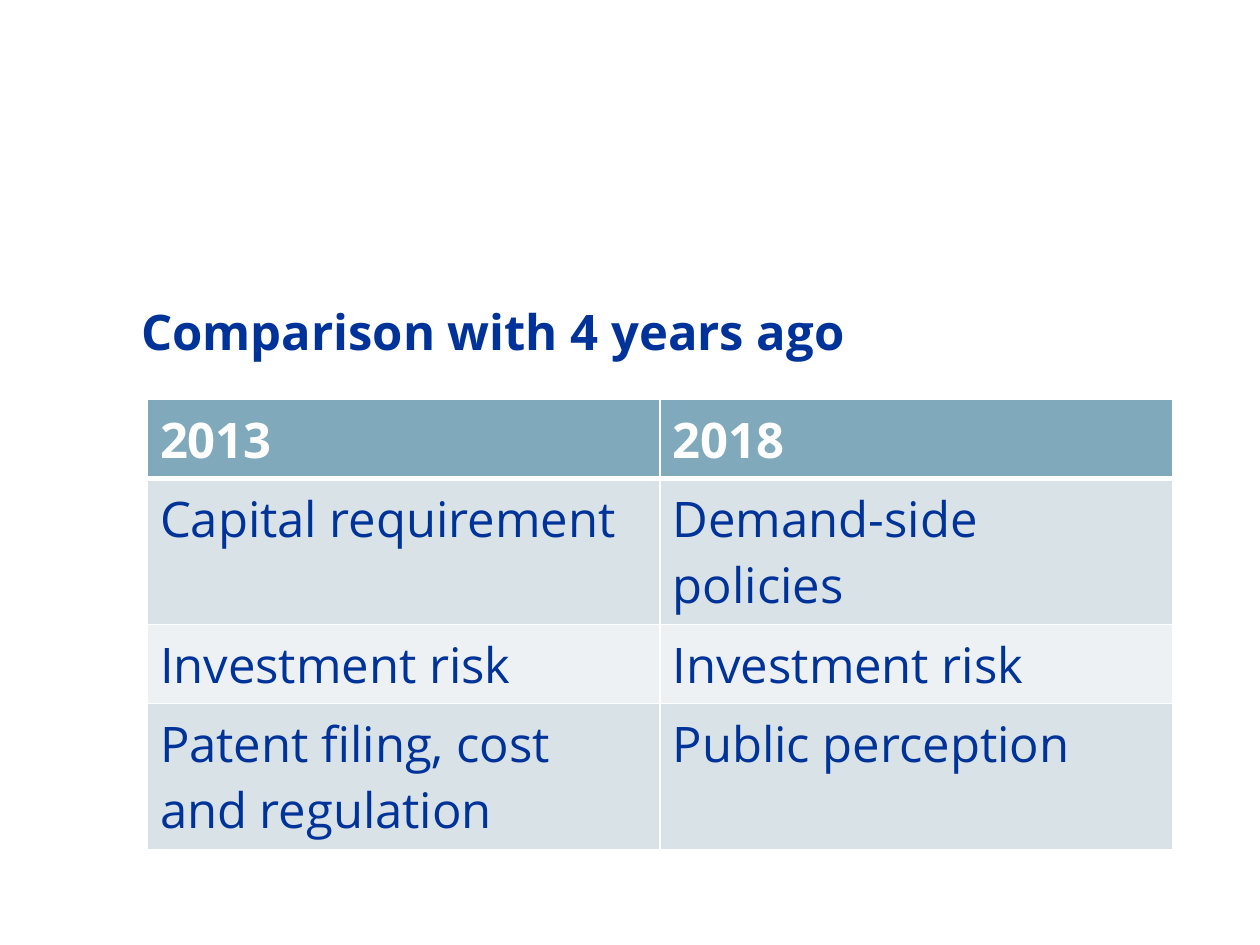
from dataclasses import dataclass

from lxml.etree import SubElement
from pptx import Presentation
from pptx.dml.color import RGBColor
from pptx.enum.text import MSO_ANCHOR, MSO_AUTO_SIZE, PP_ALIGN
from pptx.oxml.ns import qn
from pptx.util import Inches, Pt

WHITE = RGBColor(0xFF, 0xFF, 0xFF)
NAVY = RGBColor(0x00, 0x33, 0x99)
TEAL = RGBColor(0x80, 0xA9, 0xBC)
BAND_DARK = RGBColor(0xD8, 0xE2, 0xE7)
BAND_LIGHT = RGBColor(0xED, 0xF1, 0xF3)


@dataclass
class Row:
    cells: tuple[str, str]
    height: float
    fill: RGBColor
    color: RGBColor = NAVY
    bold: bool = False
    top: int = 1
    bottom: int = 1


ROWS = [
    Row(("2013", "2018"), 0.5, TEAL, WHITE, True, bottom=3),
    Row(("Capital requirement", "Demand-side policies"), 0.5, BAND_DARK, top=3),
    Row(("Investment risk", "Investment risk"), 0.5, BAND_LIGHT),
    Row(("Patent filing, cost and regulation", "Public perception"), 0.86, BAND_DARK),
]


def write(tf, text: str, color: RGBColor, bold: bool):
    p = tf.paragraphs[0]
    p.alignment = PP_ALIGN.LEFT
    r = p.add_run()
    r.text = text
    r.font.color.rgb = color
    for name, value in {"name": "Open Sans", "size": Pt(28), "bold": bold}.items():
        setattr(r.font, name, value)
    return p


def add_borders(cell, row: Row) -> None:
    tc_pr = cell._tc.get_or_add_tcPr()
    for side, width in {"L": 1, "R": 1, "T": row.top, "B": row.bottom}.items():
        ln = SubElement(tc_pr, qn(f"a:ln{side}"), w=str(Pt(width)))
        SubElement(SubElement(ln, qn("a:solidFill")), qn("a:srgbClr"), val=str(WHITE))


def add_title(s) -> None:
    title = s.shapes.title
    box = {"left": 0.92, "top": 2.33, "width": 8.15, "height": 0.68}
    for name, value in box.items():
        setattr(title, name, Inches(value))
    tf = title.text_frame
    layout = {"auto_size": MSO_AUTO_SIZE.NONE, "margin_left": Inches(0.2),
              "vertical_anchor": MSO_ANCHOR.MIDDLE}
    for name, value in layout.items():
        setattr(tf, name, value)
    write(tf, "Comparison with 4 years ago", NAVY, True).line_spacing = 0.8


def add_comparison(s) -> None:
    height = sum(row.height for row in ROWS)
    table = s.shapes.add_table(len(ROWS), 2, Inches(1.17), Inches(3.17),
                               Inches(8.14), Inches(height)).table
    for i, row in enumerate(ROWS):
        table.rows[i].height = Inches(row.height)
        for cell, text in zip(table.rows[i].cells, row.cells):
            add_borders(cell, row)
            cell.fill.solid()
            cell.fill.fore_color.rgb = row.fill
            write(cell.text_frame, text, row.color, row.bold)


def main() -> None:
    prs = Presentation()
    prs.slide_width, prs.slide_height = Inches(10), Inches(7.5)
    s = prs.slides.add_slide(prs.slide_layouts[5])
    add_title(s)
    add_comparison(s)
    prs.save("out.pptx")


if __name__ == "__main__":
    main()
